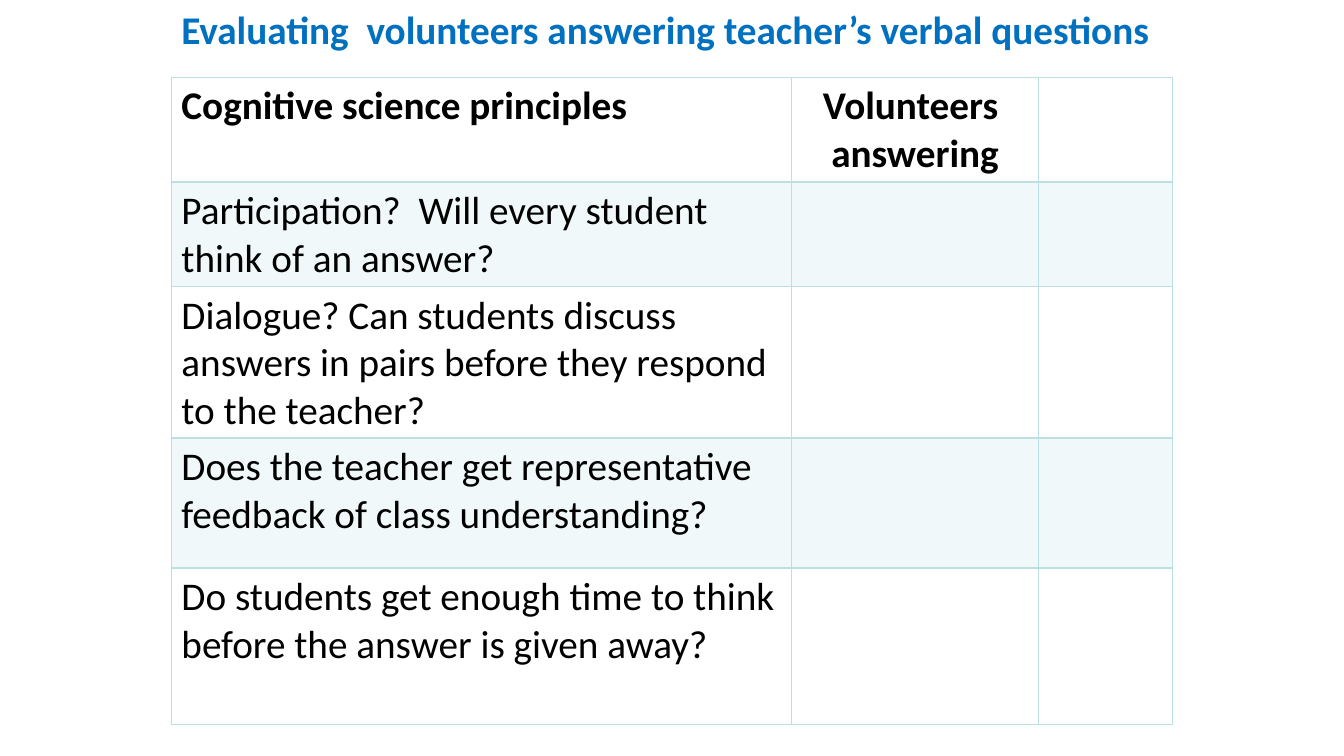
from lxml import etree
from pptx import Presentation
from pptx import util as u
from pptx.dml.color import RGBColor
from pptx.enum import text
from pptx.oxml import ns

# Content
TITLE = "Evaluating  volunteers answering teacher’s verbal questions"
ROWS = [
    ("Cognitive science principles", "Volunteers \nanswering", ""),
    ("Participation?  Will every student think of an answer?", "", ""),
    ("Dialogue? Can students discuss answers in pairs before they respond "
     "to the teacher?", "", ""),
    ("Does the teacher get representative feedback of class understanding?", "", ""),
    ("Do students get enough time to think before the answer is given away?", "", ""),
]
COLUMN_WIDTHS = (6.15, 2.45, 1.33)
ROW_HEIGHTS = (1.03, 1.04, 1.5, 1.29, 1.55)

# Look
BLUE = RGBColor(0x00, 0x70, 0xC0)
BLACK = RGBColor(0, 0, 0)
AQUA = RGBColor(0xBB, 0xE0, 0xE3)
BAND_ALPHA = 20
LEFT = 1.7


def write(frame, words, color=BLACK, bold=False, align=text.PP_ALIGN.LEFT):
    for index, line in enumerate(words.split("\n")):
        para = frame.add_paragraph() if index else frame.paragraphs[0]
        para.alignment = align
        span = para.add_run()
        span.text = line
        span.font.name = "Calibri"
        span.font.size = u.Pt(28)
        span.font.bold = bold
        span.font.color.rgb = color


def add_border(cell, side, points):
    properties = cell._tc.get_or_add_tcPr()
    line = etree.SubElement(properties, ns.qn("a:ln" + side), w=str(u.Pt(points)))
    fill = etree.SubElement(line, ns.qn("a:solidFill"))
    etree.SubElement(fill, ns.qn("a:srgbClr"), val=str(AQUA))


def fill_band(cell):
    cell.fill.solid()
    cell.fill.fore_color.rgb = AQUA
    color = cell._tc.tcPr.find(".//" + ns.qn("a:srgbClr"))
    color = cell._tc.tcPr.find(ns.qn("a:solidFill")).find(ns.qn("a:srgbClr"))
    etree.SubElement(color, ns.qn("a:alpha"), val=str(BAND_ALPHA * 1000))


deck = Presentation()
deck.slide_width, deck.slide_height = u.Inches(13.33), u.Inches(7.5)
page = deck.slides.add_slide(deck.slide_layouts[6])

# Title
box = page.shapes.add_textbox(u.Inches(LEFT), 0, u.Inches(9.86), u.Inches(1.04))
box.text_frame.word_wrap = False
write(box.text_frame, TITLE, color=BLUE, bold=True)

# Table
table = page.shapes.add_table(
    len(ROWS), len(COLUMN_WIDTHS), u.Inches(LEFT), u.Inches(0.77),
    u.Inches(sum(COLUMN_WIDTHS)), u.Inches(sum(ROW_HEIGHTS))).table
table.first_row = table.horz_banding = False
for column, width in zip(table.columns, COLUMN_WIDTHS):
    column.width = u.Inches(width)
for row, height in zip(table.rows, ROW_HEIGHTS):
    row.height = u.Inches(height)

for r, words_in_row in enumerate(ROWS):
    for c, words in enumerate(words_in_row):
        cell = table.cell(r, c)
        if words:
            write(cell.text_frame, words, bold=r == 0,
                  align=text.PP_ALIGN.CENTER if c else text.PP_ALIGN.LEFT)
        # The rule under the header is thicker
        top, bottom = (2 if r == 1 else 1), (2 if r == 0 else 1)
        for side, points in (("L", 1), ("R", 1), ("T", top), ("B", bottom)):
            add_border(cell, side, points)
        if r % 2:
            fill_band(cell)
        else:
            cell.fill.background()

deck.save("out.pptx")
